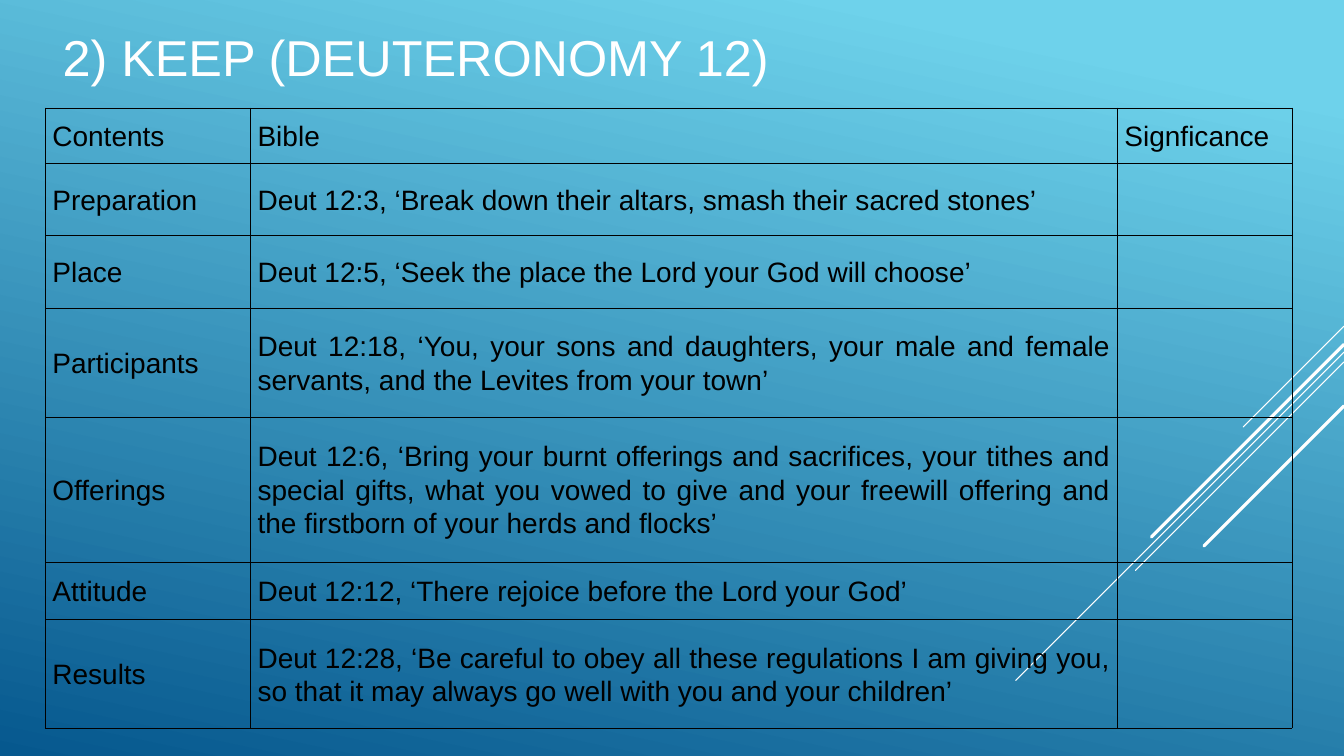
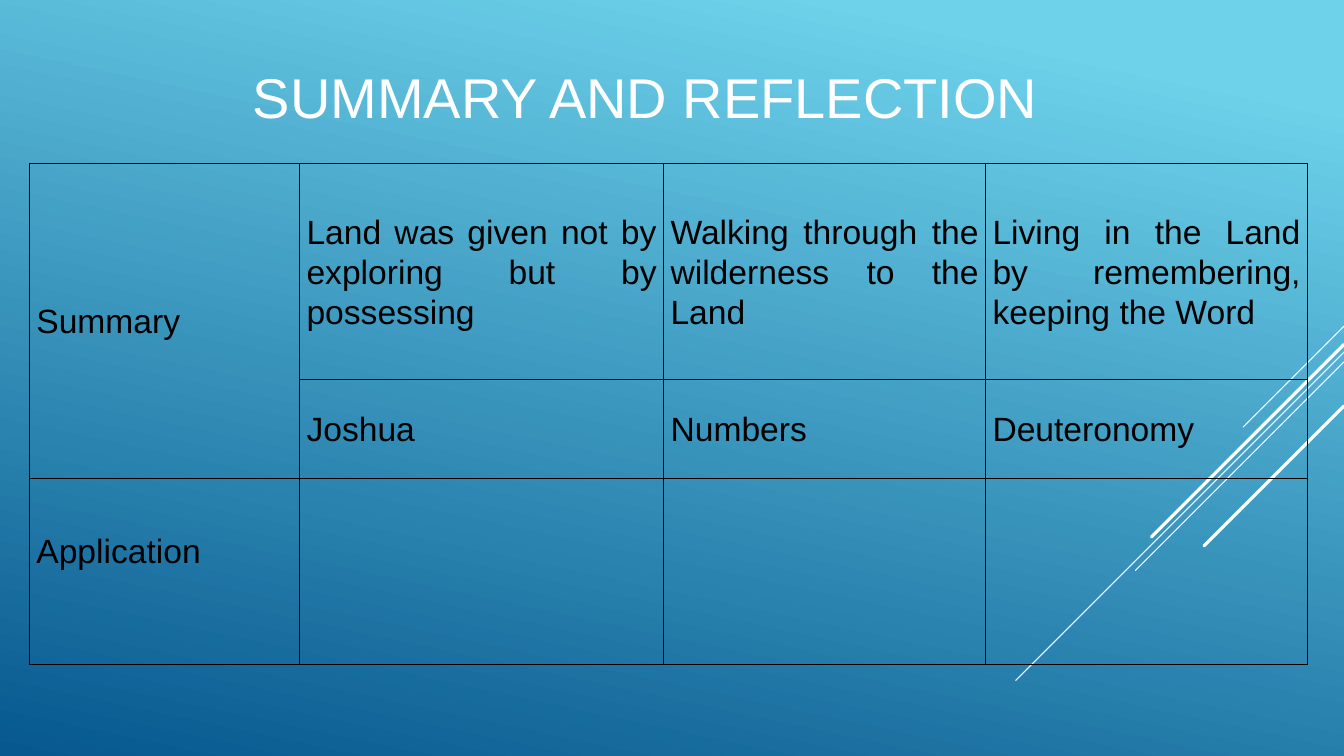
from lxml import etree
from pptx import Presentation
from pptx.dml.color import RGBColor
from pptx.enum.shapes import MSO_CONNECTOR
from pptx.enum.text import MSO_ANCHOR, MSO_AUTO_SIZE, PP_ALIGN
from pptx.oxml.ns import qn
from pptx.util import Pt

COLORS = {"sky": "6ED2EB", "deep": "06588E", "white": "FFFFFF", "black": "000000"}
FONT = "Arial"
WIDTH, HEIGHT = 960, 540
BORDER = 0.28

# Diagonals run down and left at 45° from the right edge: start y, run, line width
DIAGONALS = [
    (233, 72, 0.75),
    (251.5, 234.5, 0.75),
    (258.5, 149, 0.75),
    (246, 137.5, 2.25),
    (290, 100, 2.25),
]

SLIDES = [
    {
        "title": "2) KEEP (DEUTERONOMY 12)",
        "title_box": (37.5, -19.5, 672, 119),
        "title_size": 36,
        "table_at": (32.4, 77),
        "text_size": 20,
        "cols": [146.6, 619.2, 124.6],
        "rows": [39.4, 51.9, 51.9, 77.6, 103.6, 41.2, 77.8],
        "cells": [
            ["Contents", "Bible", "Signficance"],
            ["Preparation", "Deut 12:3, ‘Break down their altars, smash their sacred stones’", ""],
            ["Place", "Deut 12:5, ‘Seek the place the Lord your God will choose’", ""],
            ["Participants", "Deut 12:18, ‘You, your sons and daughters, your male and female "
                             "servants, and the Levites from your town’", ""],
            ["Offerings", "Deut 12:6, ‘Bring your burnt offerings and sacrifices, your tithes and "
                          "special gifts, what you vowed to give and your freewill offering and "
                          "the firstborn of your herds and flocks’", ""],
            ["Attitude", "Deut 12:12, ‘There rejoice before the Lord your God’", ""],
            ["Results", "Deut 12:28, ‘Be careful to obey all these regulations I am giving you, "
                        "so that it may always go well with you and your children’", ""],
        ],
    },
    {
        "title": "SUMMARY AND REFLECTION",
        "title_box": (173.5, 9.5, 669, 119),
        "title_size": 40,
        "table_at": (21, 116.7),
        "text_size": 24,
        "cols": [193, 260, 230, 230],
        "rows": [154, 70.7, 132.8],
        "cells": [
            ["Summary", "Land was given not by exploring but by possessing",
             "Walking through the wilderness to the Land",
             "Living in the Land by remembering, keeping the Word"],
            ["", "Joshua", "Numbers", "Deuteronomy"],
            ["Application", "", "", ""],
        ],
    },
]


def write(tf, text, size, color="black", align=PP_ALIGN.LEFT, spacing=1, after=0):
    p = tf.paragraphs[0]
    p.alignment = align
    p.line_spacing = spacing
    p.space_after = Pt(after)
    p.font.size = Pt(size)
    if text:
        r = p.add_run()
        r.text = text
        r.font.name = FONT
        r.font.size = Pt(size)
        r.font.color.rgb = RGBColor.from_string(COLORS[color])


def outline(cell):
    """Draw a thin black border on all four sides of a table cell."""
    tcPr = cell._tc.get_or_add_tcPr()
    for i, side in enumerate(("a:lnL", "a:lnR", "a:lnT", "a:lnB")):
        ln = etree.Element(qn(side), w=str(int(Pt(BORDER))))
        fill = etree.SubElement(ln, qn("a:solidFill"))
        etree.SubElement(fill, qn("a:srgbClr"), val=COLORS["black"])
        tcPr.insert(i, ln)


prs = Presentation()
prs.slide_width, prs.slide_height = Pt(WIDTH), Pt(HEIGHT)
master = prs.slide_master
title_only = prs.slide_layouts[5]

bg = master.background.fill
bg.gradient()
bg.gradient_angle = 258  # counter-clockwise, i.e. 102° clockwise
for stop, pos, color in zip(bg.gradient_stops, (0.1, 1), ("sky", "deep")):
    stop.position = pos
    stop.color.rgb = RGBColor.from_string(COLORS[color])

for n, content in enumerate(SLIDES):
    s = prs.slides.add_slide(title_only)

    # Connectors can only be made on a slide, so move them to the master
    if n == 0:
        for i, (y, run, width) in enumerate(DIAGONALS):
            c = s.shapes.add_connector(MSO_CONNECTOR.STRAIGHT, Pt(WIDTH), Pt(y),
                                       Pt(WIDTH - run), Pt(y + run))
            c.line.color.rgb = RGBColor.from_string(COLORS["white"])
            c.line.width = Pt(width)
            spPr = c.element.spPr
            spPr.ln.set("cap", "rnd")
            etree.SubElement(spPr, qn("a:effectLst"))
            c.element.nvCxnSpPr.cNvPr.set("id", str(20 + i))
            master.shapes.element.append(c.element)

    title = s.shapes.title
    title.left, title.top, title.width, title.height = map(Pt, content["title_box"])
    tf = title.text_frame
    tf.word_wrap = True
    tf.auto_size = MSO_AUTO_SIZE.NONE
    tf.vertical_anchor = MSO_ANCHOR.MIDDLE
    write(tf, content["title"], content["title_size"], color="white")

    cols, rows = content["cols"], content["rows"]
    left, top = content["table_at"]
    table = s.shapes.add_table(len(rows), len(cols), Pt(left), Pt(top),
                               Pt(sum(cols)), Pt(sum(rows))).table
    table.first_row = table.horz_banding = False
    for col, width in zip(table.columns, cols):
        col.width = Pt(width)
    for row, height, texts in zip(table.rows, rows, content["cells"]):
        row.height = Pt(height)
        for cell, text in zip(row.cells, texts):
            cell.fill.background()
            cell.vertical_anchor = MSO_ANCHOR.MIDDLE
            cell.margin_left = cell.margin_right = Pt(5)
            cell.margin_top = cell.margin_bottom = Pt(1.5)
            outline(cell)
            write(cell.text_frame, text, content["text_size"],
                  align=PP_ALIGN.JUSTIFY, spacing=1.07, after=8)

# The last table is the summary
table.cell(0, 0).merge(table.cell(1, 0))
table.cell(2, 0).margin_bottom = Pt(31)

prs.save("out.pptx")
